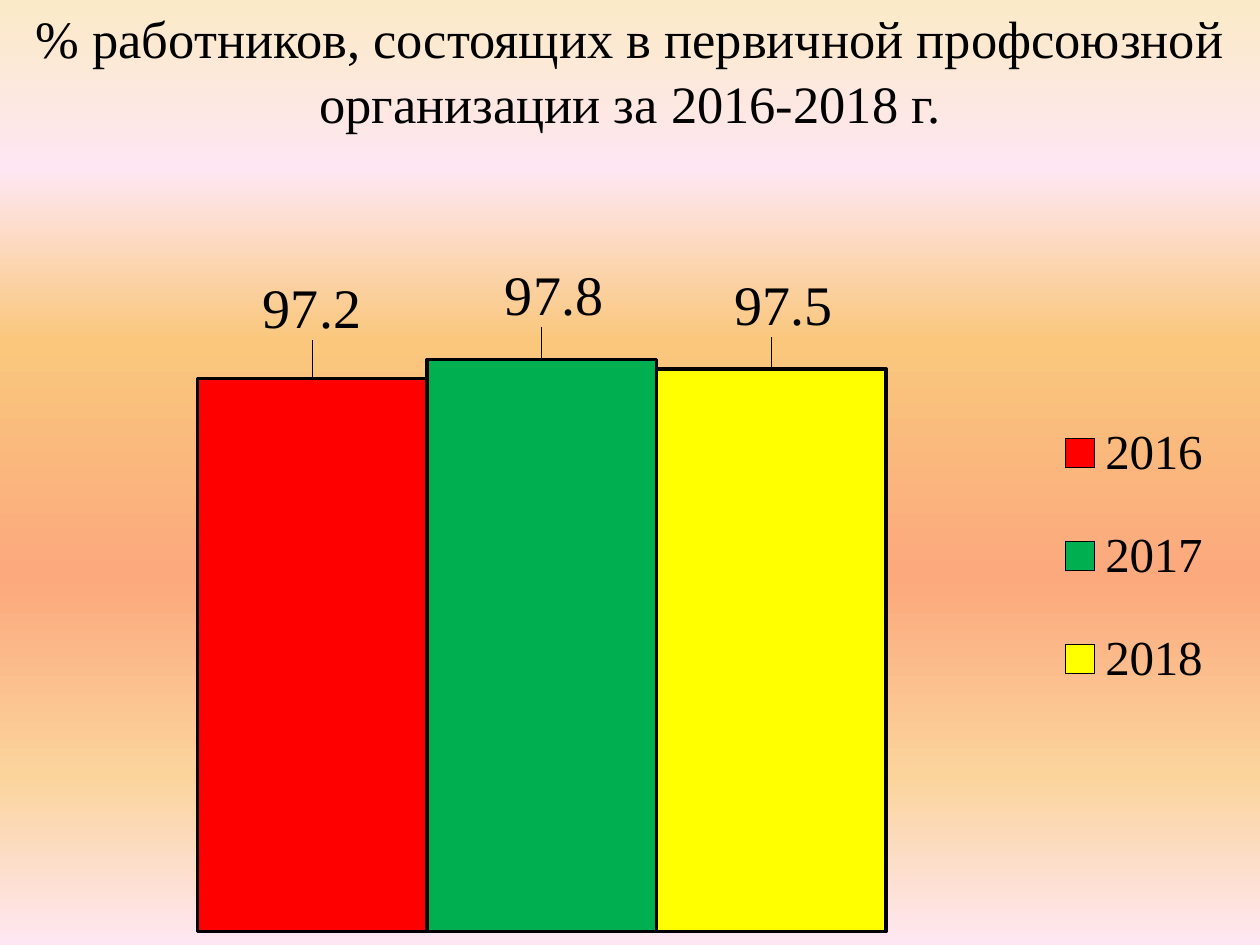
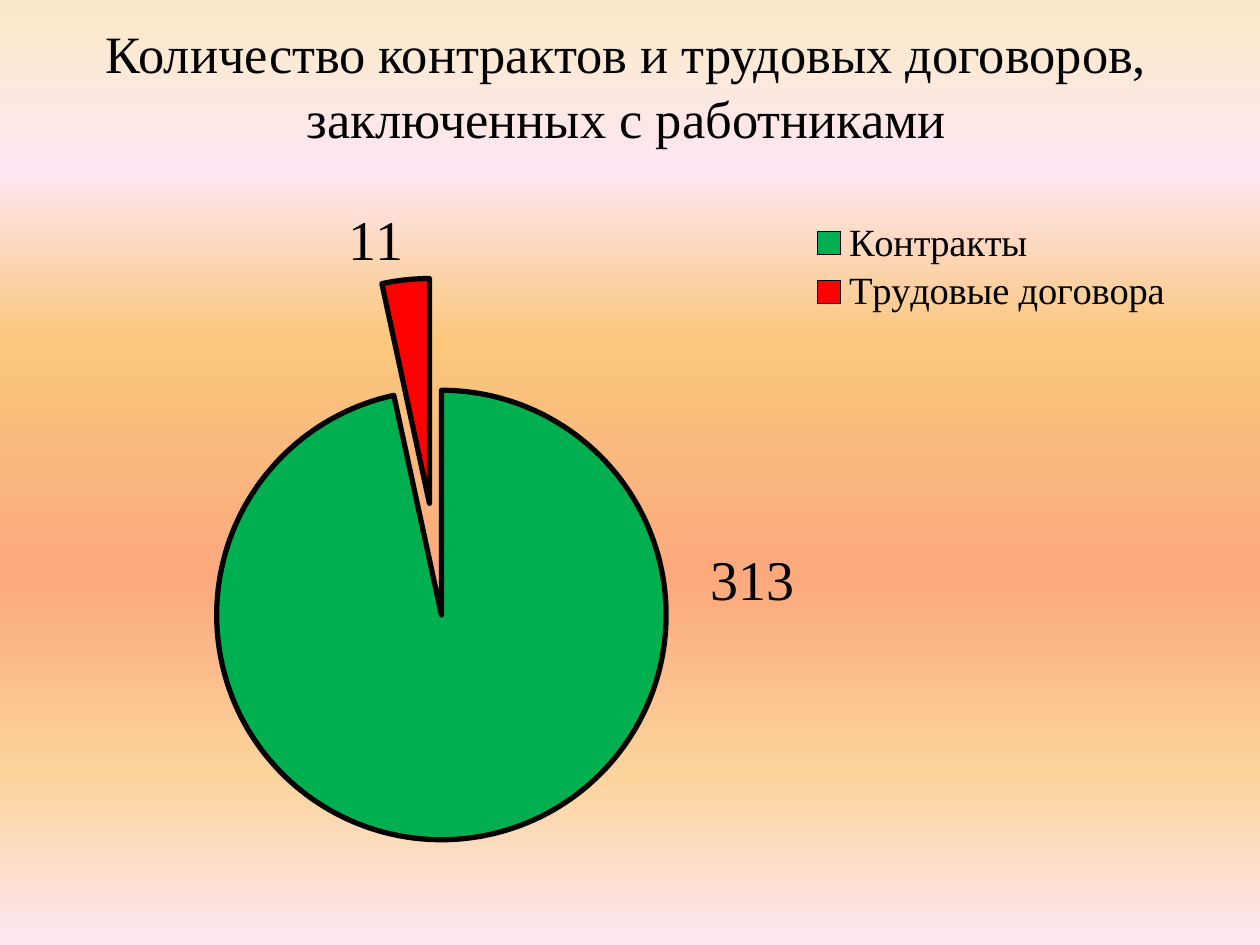
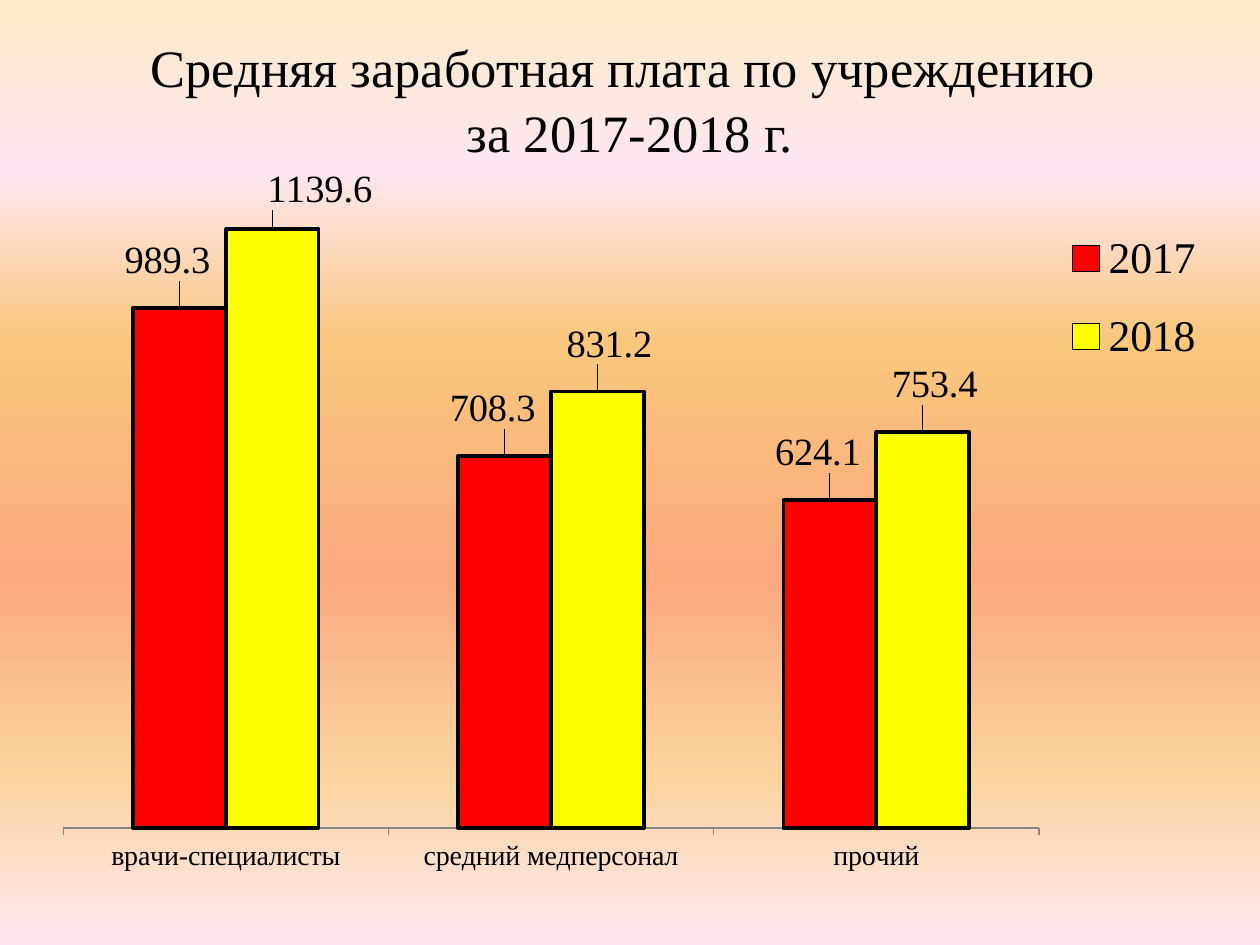
from pptx import Presentation
from pptx.chart.data import CategoryChartData
from pptx.dml.color import RGBColor
from pptx.enum.chart import XL_CHART_TYPE as Kind, XL_LABEL_POSITION as Spot
from pptx.enum.chart import XL_LEGEND_POSITION as Side, XL_TICK_MARK as Tick
from pptx.enum.text import MSO_ANCHOR as Anchor, PP_ALIGN as Align
from pptx.oxml import parse_xml
from pptx.oxml.ns import nsdecls, qn
from pptx.util import Pt

BLACK = RGBColor(0x00, 0x00, 0x00)
GREY = RGBColor(0x86, 0x86, 0x86)
RED = RGBColor(0xFF, 0x00, 0x00)
GREEN = RGBColor(0x00, 0xB0, 0x50)
YELLOW = RGBColor(0xFF, 0xFF, 0x00)
SKY = [(0, RGBColor(0xFB, 0xEA, 0xC7)), (18, RGBColor(0xFE, 0xE7, 0xF2)),
       (36, RGBColor(0xFA, 0xC7, 0x7D)), (61, RGBColor(0xFB, 0xA9, 0x7D)),
       (82, RGBColor(0xFB, 0xD4, 0x9C)), (100, RGBColor(0xFE, 0xE7, 0xF2))]
SERIF, SANS = "Times New Roman", "Calibri"

# Boxes are in points; plot, legend and label shifts are fractions of the chart.
# A series is name, values, colours (one, or one per point), label shifts.
SLIDES = [
    dict(title=["% работников, состоящих в первичной профсоюзной организации за 2016-2018 г."],
         title_box=(0, 0, 720, 78.5),
         kind=Kind.COLUMN_CLUSTERED, chart_box=(0, 152, 720, 388),
         plot=(0.02, 0.03, 0.82, 0.95), legend=(0.83, 0.16, 0.14, 0.53),
         legend_size=28, label_size=32, outline=2, scale=(80, 100, 0.1),
         categories=["1"],
         series=[("2016", [97.2], [RED], [(0, -0.05)]),
                 ("2017", [97.8], [GREEN], [(0.01, -0.04)]),
                 ("2018", [97.5], [YELLOW], [(0.01, -0.04)])]),
    dict(title=["Количество контрактов и трудовых договоров, заключенных с работниками"],
         title_box=(34, 0, 648, 96),
         kind=Kind.PIE, chart_box=(11.5, 106.5, 698, 422),
         plot=(0.11, 0.12, 0.46, 0.77), legend=(0.64, 0.04, 0.31, 0.14),
         legend_size=22, label_size=32, outline=3, explosion=25,
         categories=["Контракты", "Трудовые договора"],
         series=[("Series 1", [313, 11], [GREEN, RED], [(0.2, -0.4), None])]),
    dict(title=["Средняя заработная плата по учреждению ", "за 2017-2018 г."],
         title_box=(36, 16.5, 648, 78.5),
         kind=Kind.COLUMN_CLUSTERED, chart_box=(22.5, 96, 680, 410),
         plot=(0.02, 0.04, 0.82, 0.88), legend=(0.86, 0.05, 0.12, 0.26),
         legend_size=25, label_size=22, outline=2, scale=(0, 1200, 200),
         label_format="0.0", category_size=16,
         categories=["врачи-специалисты", "средний медперсонал", "прочий"],
         series=[("2017", [989.3, 708.3, 624.1], [RED],
                  [(-0.01, -0.03), (-0.01, -0.03), (-0.01, -0.03)]),
                 ("2018", [1139.6, 831.2, 753.4], [YELLOW],
                  [(0.04, -0.02), (0.01, -0.03), (0.01, -0.03)])]),
]


def style_font(font, size, name=SERIF):
    font.size, font.name = Pt(size), name
    font.color.rgb = BLACK


def paint_background(page):
    page.background.fill.gradient()
    page.background.fill.gradient_angle = 270
    stops = next(page.element.iter(qn("a:gsLst")))
    for stop in list(stops):
        stops.remove(stop)
    for percent, color in SKY:
        stops.append(parse_xml(f'<a:gs {nsdecls("a")} pos="{percent * 1000}">'
                               f'<a:srgbClr val="{color}"/></a:gs>'))


def add_title(page, lines, box):
    frame = page.shapes.add_textbox(*map(Pt, box)).text_frame
    frame.word_wrap = True
    frame.vertical_anchor = Anchor.MIDDLE
    para = frame.paragraphs[0]
    para.alignment = Align.CENTER
    para.line_spacing = 1.04
    for number, line in enumerate(lines):
        if number:
            para.add_line_break()
        span = para.add_run()
        span.text = line
        style_font(span.font, 30)


def set_layout(parent, before, place, inner=False):
    """Put a manual layout into a chart part, right after its child `before`."""
    modes = ['<c:layoutTarget val="inner"/>'] if inner else []
    if len(place) == 4:
        modes += ['<c:xMode val="edge"/>', '<c:yMode val="edge"/>']
    values = [f'<c:{key} val="{value}"/>' for key, value in zip("xywh", place)]
    for old in parent.findall(qn("c:layout")):
        parent.remove(old)
    layout = parse_xml(f'<c:layout {nsdecls("c")}><c:manualLayout>'
                       f'{"".join(modes + values)}</c:manualLayout></c:layout>')
    if before is None:
        parent.insert(0, layout)
    else:
        parent.find(qn(before)).addnext(layout)


def paint(part, color, outline):
    part.format.fill.solid()
    part.format.fill.fore_color.rgb = color
    part.format.line.color.rgb = BLACK
    part.format.line.width = Pt(outline)


def style_series(series, slide, colors, shifts):
    if len(colors) == 1:
        paint(series, colors[0], slide["outline"])
        series.invert_if_negative = False
    else:
        for number, color in enumerate(colors):
            paint(series.points[number], color, slide["outline"])
    labels = series.data_labels
    labels.show_value = True
    labels.position = Spot.OUTSIDE_END
    style_font(labels.font, slide["label_size"])
    if "label_format" in slide:
        labels.number_format = slide["label_format"]
        labels.number_format_is_linked = False
    # Labels moved away from their default place
    for number, shift in enumerate(shifts):
        if shift:
            label = series.points[number].data_label
            label.position = Spot.OUTSIDE_END
            style_font(label.font, slide["label_size"])
            entry = next(item for item in series._element.iter(qn("c:dLbl"))
                         if item.find(qn("c:idx")).get("val") == str(number))
            set_layout(entry, "c:idx", shift)


def style_axes(chart, slide):
    scale, names = chart.value_axis, chart.category_axis
    scale.minimum_scale, scale.maximum_scale, scale.major_unit = slide["scale"]
    scale.has_major_gridlines = False
    scale.visible = False
    if "category_size" in slide:
        style_font(names.tick_labels.font, slide["category_size"])
        names.major_tick_mark = Tick.OUTSIDE
        names.format.line.color.rgb = GREY
    else:
        names.visible = False


def add_chart(page, slide):
    data = CategoryChartData()
    data.categories = slide["categories"]
    for name, values, _, _ in slide["series"]:
        data.add_series(name, values)
    chart = page.shapes.add_chart(slide["kind"], *map(Pt, slide["chart_box"]), data).chart
    style_font(chart.font, 18, SANS)
    chart.has_title = False
    chart.has_legend = True
    chart.legend.position = Side.RIGHT
    chart.legend.include_in_layout = False
    style_font(chart.legend.font, slide["legend_size"])
    plot = chart.plots[0]
    plot.vary_by_categories = slide["kind"] == Kind.PIE
    for series, (_, _, colors, shifts) in zip(plot.series, slide["series"]):
        style_series(series, slide, colors, shifts)
    if slide["kind"] == Kind.PIE:
        explosion = parse_xml(f'<c:explosion {nsdecls("c")} val="{slide["explosion"]}"/>')
        plot.series[0]._element.find(qn("c:dPt")).addprevious(explosion)
    else:
        plot.gap_width, plot.overlap = 150, 0
        style_axes(chart, slide)
    area = next(chart.element.iter(qn("c:plotArea")))
    set_layout(area, None, slide["plot"], inner=True)
    set_layout(next(chart.element.iter(qn("c:legend"))), "c:legendPos", slide["legend"])


def main():
    deck = Presentation()
    deck.slide_width, deck.slide_height = Pt(720), Pt(540)
    for slide in SLIDES:
        page = deck.slides.add_slide(deck.slide_layouts[6])
        paint_background(page)
        add_title(page, slide["title"], slide["title_box"])
        add_chart(page, slide)
    deck.save("out.pptx")


if __name__ == "__main__":
    main()
